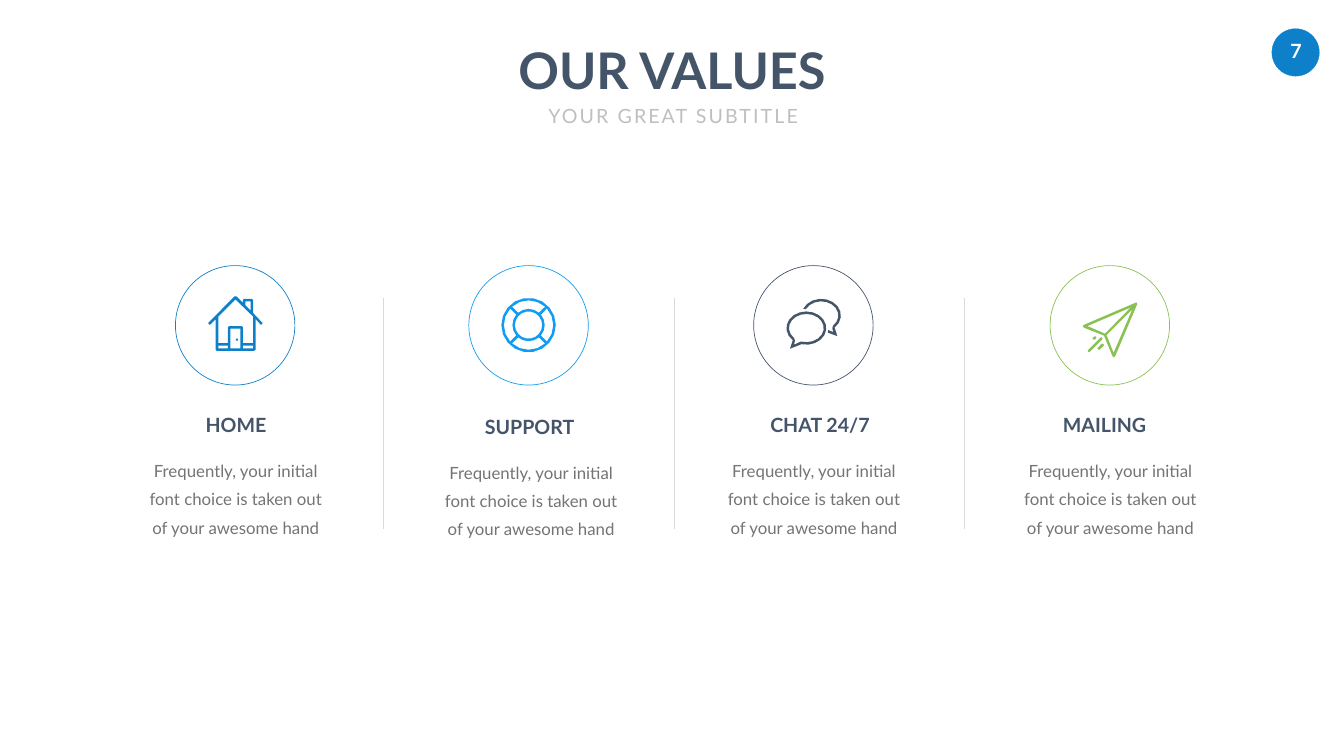
"""Build the slide of four values with icons, headings and short texts."""
from math import cos, radians, sin

from lxml.etree import SubElement
from pptx import Presentation
from pptx.dml.color import RGBColor
from pptx.enum.shapes import MSO_CONNECTOR, MSO_SHAPE
from pptx.enum.text import MSO_ANCHOR, MSO_AUTO_SIZE, PP_ALIGN
from pptx.oxml.ns import qn
from pptx.util import Pt

PX = 9144
OVAL = MSO_SHAPE.OVAL
LINE = MSO_CONNECTOR.STRAIGHT
CENTER = PP_ALIGN.CENTER
TOP, MIDDLE = MSO_ANCHOR.TOP, MSO_ANCHOR.MIDDLE
GROW = MSO_AUTO_SIZE.SHAPE_TO_FIT_TEXT
BLUE, SKY, NAVY, GREEN = "0E80C9", "119CF4", "445469", "8AC153"
BODY = "Frequently, your initial font choice is taken out of your awesome hand"


def color(code):
    return RGBColor.from_string(code)


def arc(x, y, rx, ry, start, end):
    steps = round(abs(end - start) / 20)
    turns = [radians(start + (end - start) * i / steps) for i in range(steps + 1)]
    return [(x + rx * cos(a), y + ry * sin(a)) for a in turns]


def ring(x, y, size):
    return arc(x, y, size, size, 0, 340)


def rect(left, top, right, bottom):
    return [(left, top), (right, top), (right, bottom), (left, bottom)]


def house():
    return [
        [(521, 641), (502, 621), (502, 595), (499, 593), (484, 593),
         (482, 595), (482, 601), (469, 588), (465, 588), (413, 641),
         (415, 644), (417, 644), (428, 633), (428, 694), (430, 696),
         (504, 696), (507, 694), (507, 633), (517, 644), (519, 644)],
        [(502, 681), (482, 681), (482, 649), (479, 647), (455, 647),
         (452, 649), (452, 681), (433, 681), (433, 628), (467, 594),
         (502, 628)],
        [(487, 598), (497, 598), (497, 616), (487, 606)],
        rect(433, 686, 452, 691),
        rect(457, 652, 477, 691),
        rect(482, 686, 502, 691),
        rect(468, 672, 472, 676),
    ]


def buoy():
    mid = (1048.5, 645)
    rings = [ring(*mid, 54), ring(*mid, 27)]
    for turn in range(0, 360, 90):
        rings.append(arc(*mid, 49, 49, turn - 42, turn + 42)
                     + arc(*mid, 32, 32, turn + 40, turn - 40))
    return rings


def chat():
    return [
        arc(1599.5, 651, 39.5, 33, 133, 464) + [(1567, 692)],
        arc(1599.5, 651, 34.5, 28, 135, 466)
        + [(1588, 678), (1575, 684), (1577, 676)],
        arc(1629, 626, 39, 33, 203, 407)
        + [(1661, 667), (1642, 660), (1643, 655), (1653, 659), (1651, 652)]
        + arc(1629, 626, 34, 28, 407, 207),
    ]


def plane():
    return [
        [(2256, 603), (2254, 600), (2149, 645), (2148, 647), (2150, 650),
         (2190, 666), (2207, 707), (2209, 709), (2212, 707)],
        [(2209, 700), (2195, 665), (2246, 614)],
        [(2157, 647), (2243, 610), (2192, 662)],
        [(2187, 682), (2190, 684), (2189, 686), (2182, 693), (2180, 694),
         (2177, 692), (2178, 690), (2185, 682)],
        [(2187, 672), (2185, 669), (2183, 670), (2158, 695), (2158, 697),
         (2160, 699), (2162, 698), (2186, 674)],
        [(2172, 674), (2174, 671), (2175, 669), (2172, 667), (2171, 668),
         (2168, 670), (2167, 672), (2170, 674)],
    ]


class Deck:
    def __init__(self, wide, high, font):
        self.show = Presentation()
        self.show.slide_width, self.show.slide_height = wide * PX, high * PX
        self.slide = self.show.slides.add_slide(self.show.slide_layouts[6])
        self.shapes = self.slide.shapes
        self.font = font

    def text(self, words, box, size, tint, bold=False, wrap=False,
             pad=(10, 5), anchor=TOP, lead=None, before=0, track=0):
        frame = self.shapes.add_textbox(*[n * PX for n in box]).text_frame
        frame.text = words
        frame.word_wrap = wrap
        frame.auto_size = GROW
        frame.vertical_anchor = anchor
        frame.margin_left = frame.margin_right = pad[0] * PX
        frame.margin_top = frame.margin_bottom = pad[1] * PX
        para = frame.paragraphs[0]
        para.alignment = CENTER
        para.space_before = Pt(before)
        para.line_spacing = lead
        run = para.runs[0]
        run.font.name = self.font
        run.font.size = Pt(size)
        run.font.bold = bold
        run.font.color.rgb = color(tint)
        if track:
            run.font._element.set("spc", str(track * 100))

    def disc(self, left, top, size, tint, weight, fill=False):
        shape = self.shapes.add_shape(
            OVAL, left * PX, top * PX, size * PX, size * PX)
        shape.shadow.inherit = False
        shape.line.color.rgb = color(tint)
        shape.line.width = Pt(weight)
        if fill:
            shape.fill.solid()
            shape.fill.fore_color.rgb = color(tint)
        else:
            shape.fill.background()

    def icon(self, rings, tint):
        pen = None
        for loop in rings:
            first, *rest = [(x * PX, y * PX) for x, y in loop]
            if pen is None:
                pen = self.shapes.build_freeform(*first, scale=1.0)
            else:
                pen.move_to(*first)
            pen.add_line_segments(rest, close=True)
        shape = pen.convert_to_shape()
        shape.shadow.inherit = False
        shape.fill.solid()
        shape.fill.fore_color.rgb = color(tint)
        shape.line.fill.background()

    def rule(self, x, top, end, tint):
        line = self.shapes.add_connector(LINE, x * PX, top * PX, x * PX, end * PX)
        line.line.color.rgb = color(tint)
        line.line.width = Pt(1)
        SubElement(line._element.spPr, qn("a:effectLst"))

    def save(self):
        self.show.save("out.pptx")


def main():
    deck = Deck(2666, 1500, "Lato")
    deck.disc(2523, 57, 94, BLUE, 0.5, fill=True)
    deck.text("7", (2527, 67, 88, 67), 28, "FFFFFF", bold=True, pad=(20, 10))

    values = [
        ("HOME", 397, 142, 260, 815, 348, BLUE, house()),
        ("SUPPORT", 949, 203, 846, 818, 930, SKY, buoy()),
        ("CHAT 24/7", 1511, 231, 1407, 815, 1495, NAVY, chat()),
        ("MAILING", 2096, 190, 1995, 815, 2083, GREEN, plane()),
    ]
    for name, left, wide, body, top, edge, tint, rings in values:
        deck.text(BODY, (body, top + 71, 415, 192), 24, "737572", wrap=True,
                  pad=(24, 12), lead=Pt(40.4), before=4.8)
        deck.text(name, (left, top, wide, 57), 28, NAVY, bold=True, anchor=MIDDLE)
        deck.icon(rings, tint)
        deck.disc(edge, 527, 237, tint, 1)
    for x in (760, 1337, 1913):
        deck.rule(x, 591, 1049, "D9D9D9")

    deck.text("OUR VALUES", (1008, 72, 650, 131), 72, NAVY, bold=True)
    deck.text("YOUR GREAT SUBTITLE", (1056, 185, 559, 81), 28, "BFBFBF",
              pad=(24, 12), lead=1.2, before=5.6, track=3)
    deck.save()


if __name__ == "__main__":
    main()
